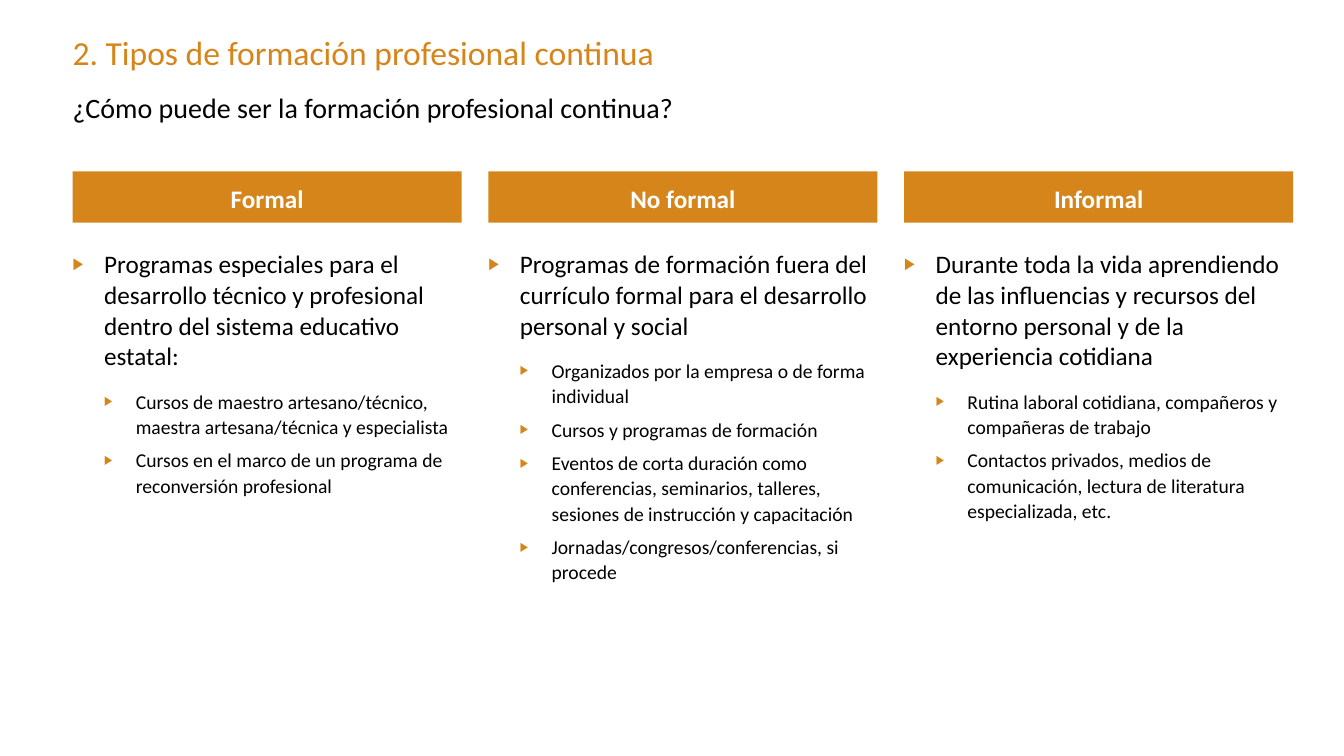
"""Build a slide comparing three types of continuing professional training."""
import pptx
import pptx.dml.color
import pptx.enum.shapes
import pptx.enum.text
import pptx.util
from lxml import etree
from pptx.oxml.ns import qn

TITLE = "2. Tipos de formación profesional continua"
QUESTION = "¿Cómo puede ser la formación profesional continua?"
TYPES = [
    ("Formal",
     "Programas especiales para el desarrollo técnico y profesional dentro del sistema educativo estatal:",
     ["Cursos de maestro artesano/técnico, maestra artesana/técnica y especialista",
      "Cursos en el marco de un programa de reconversión profesional"]),
    ("No formal",
     "Programas de formación fuera del currículo formal para el desarrollo personal y social",
     ["Organizados por la empresa o de forma individual",
      "Cursos y programas de formación",
      "Eventos de corta duración como conferencias, seminarios, talleres, sesiones de instrucción y capacitación",
      "Jornadas/congresos/conferencias, si procede"]),
    ("Informal",
     "Durante toda la vida aprendiendo de las influencias y recursos del entorno personal y de la experiencia cotidiana",
     ["Rutina laboral cotidiana, compañeros y compañeras de trabajo",
      "Contactos privados, medios de comunicación, lectura de literatura especializada, etc."]),
]
COLORS = {"accent": "D6851B", "text": "000000", "white": "FFFFFF"}
FONT = "Calibri"
Pt = pptx.util.Pt
ANCHOR = pptx.enum.text.MSO_ANCHOR
ALIGN = pptx.enum.text.PP_ALIGN

LEFT, COLUMN_WIDTH, COLUMN_PITCH = 51.8, 278, 297
BANNER_TOP, BANNER_HEIGHT = 122.4, 36.7
LIST_TOP, LIST_HEIGHT = 177, 290
INDENT = 22.6


def rgb(name):
    """Return the palette colour."""
    return pptx.dml.color.RGBColor.from_string(COLORS[name])


def place(box, left, top, width, height):
    """Set the position and size in points."""
    box.left, box.top, box.width, box.height = map(Pt, (left, top, width, height))


def prepare(box, anchor=ANCHOR.TOP, margins=(0, 0, 0, 0)):
    """Set the frame of a text and return it."""
    frame = box.text_frame
    frame.word_wrap = True
    frame.auto_size = pptx.enum.text.MSO_AUTO_SIZE.NONE
    frame.vertical_anchor = anchor
    (frame.margin_left, frame.margin_top,
     frame.margin_right, frame.margin_bottom) = map(Pt, margins)
    return frame


def write(para, text, size, color="text", bold=False, align=ALIGN.LEFT,
          spacing=None, before=0, after=0):
    """Write one run and format its paragraph."""
    para.alignment = align
    para.space_before, para.space_after = Pt(before), Pt(after)
    if spacing:
        para.line_spacing = Pt(spacing)
    span = para.add_run()
    span.text = text
    span.font.name, span.font.size, span.font.bold = FONT, Pt(size), bold
    span.font.color.rgb = rgb(color)


def add_bullet(para, level):
    """Give a paragraph a triangle bullet and a hanging indent."""
    para.level = level
    properties = para._p.get_or_add_pPr()
    properties.set("marL", str(Pt(INDENT * (level + 1))))
    properties.set("indent", str(-Pt(INDENT)))
    color = etree.SubElement(properties, qn("a:buClr"))
    etree.SubElement(color, qn("a:srgbClr"), val=COLORS["accent"])
    etree.SubElement(properties, qn("a:buSzPct"), val="65000")
    etree.SubElement(properties, qn("a:buFont"), typeface="Arial")
    etree.SubElement(properties, qn("a:buChar"), char="▶")


def add_banner(slide, left, label):
    """Add the heading bar of a column."""
    banner = slide.shapes.add_shape(
        pptx.enum.shapes.MSO_SHAPE.RECTANGLE,
        Pt(left), Pt(BANNER_TOP), Pt(COLUMN_WIDTH), Pt(BANNER_HEIGHT))
    banner.shadow.inherit = False
    banner.fill.solid()
    banner.fill.fore_color.rgb = rgb("accent")
    banner.line.fill.background()
    frame = prepare(banner, ANCHOR.MIDDLE, (3, 6, 3, 0))
    write(frame.paragraphs[0], label, 18, "white", True, ALIGN.CENTER, spacing=17)


def fill_list(box, left, summary, examples):
    """Write the summary of a column and its examples."""
    place(box, left, LIST_TOP, COLUMN_WIDTH, LIST_HEIGHT)
    frame = prepare(box)
    para = frame.paragraphs[0]
    add_bullet(para, 0)
    write(para, summary, 18, spacing=22, after=6)
    for example in examples:
        para = frame.add_paragraph()
        add_bullet(para, 1)
        write(para, example, 14, spacing=18, before=6)


def main():
    """Build and save the deck."""
    deck = pptx.Presentation()
    deck.slide_width, deck.slide_height = Pt(960), Pt(540)
    slide = deck.slides.add_slide(deck.slide_layouts.get_by_name("Comparison"))
    title, question, *lists = slide.placeholders

    place(title, LEFT, 23, 708.5, 35.3)
    write(prepare(title).paragraphs[0], TITLE, 24, "accent")
    place(question, LEFT, 64.8, 870.5, 34.6)
    write(prepare(question).paragraphs[0], QUESTION, 20)

    for column, (box, (label, summary, examples)) in enumerate(zip(lists, TYPES)):
        left = LEFT + column * COLUMN_PITCH
        fill_list(box, left, summary, examples)
        add_banner(slide, left, label)

    deck.save("out.pptx")


if __name__ == "__main__":
    main()
